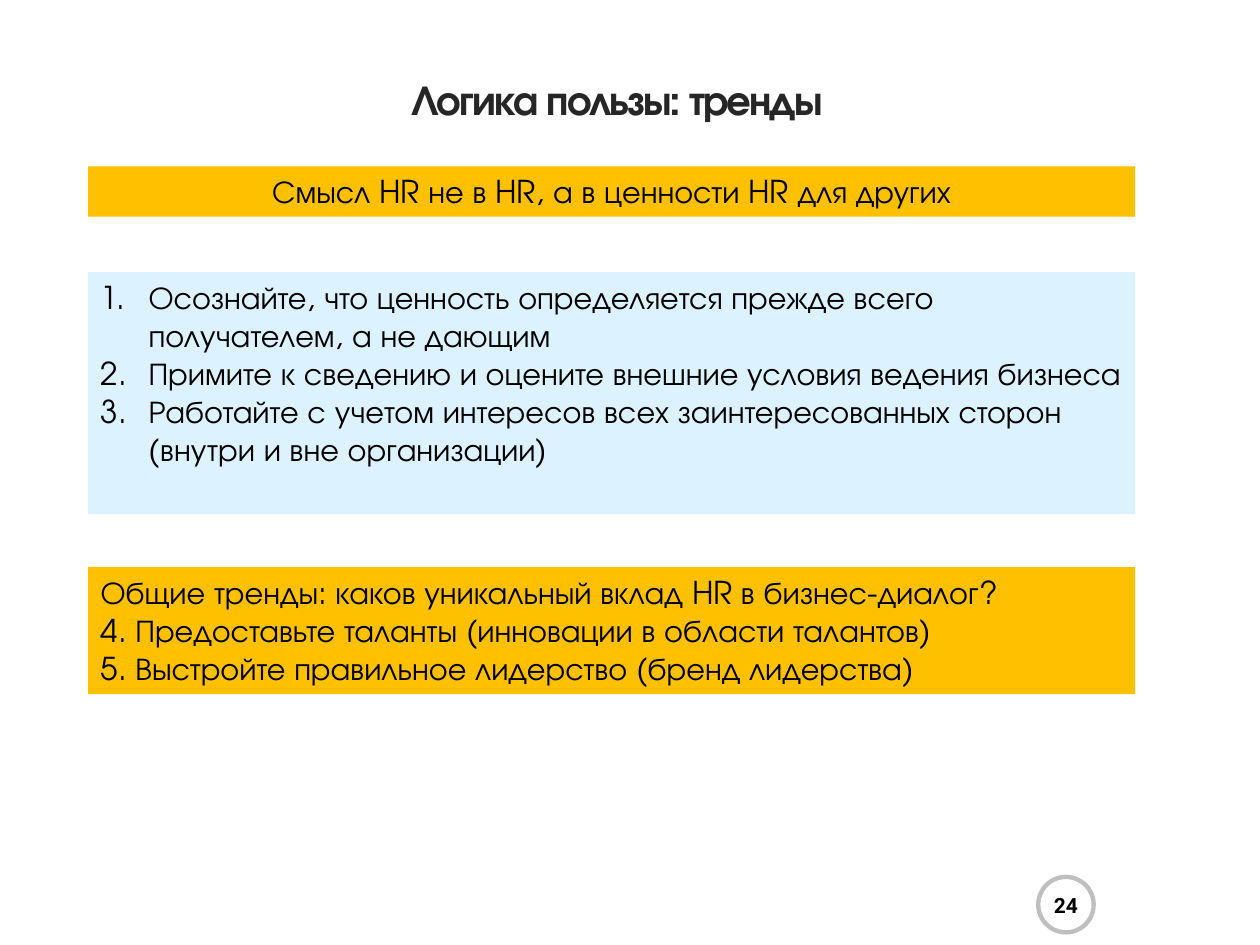
from dataclasses import dataclass

from lxml import etree
from pptx import Presentation
from pptx import util as u
from pptx.dml.color import RGBColor
from pptx.enum import shapes, text
from pptx.oxml.ns import qn


@dataclass(frozen=True)
class Theme:
    font: str = "TeX Gyre Adventor"
    number_font: str = "Roboto"
    title: str = "262626"
    ink: str = "000000"
    amber: str = "FFC000"
    sky: str = "CCECFF"
    white: str = "FFFFFF"
    ring: str = "BFBFBF"
    title_size: int = 24
    body_size: int = 18
    number_size: int = 12


theme = Theme()
LEFT, WIDTH = u.Inches(0.7), u.Inches(8.31)


def paint(sp, color, alpha=None):
    """Fill a shape with a colour, at an opacity in percent if given."""
    sp.fill.solid()
    sp.fill.fore_color.rgb = RGBColor.from_string(color)
    if alpha is not None:
        clr = sp.fill._xPr.find(qn("a:solidFill"))[0]
        etree.SubElement(clr, qn("a:alpha")).set("val", str(alpha * 1000))


def add_run(p, words, size, color=theme.ink, font=theme.font, bold=False):
    r = p.add_run()
    r.text = words
    r.font.name, r.font.size, r.font.bold = font, u.Pt(size), bold
    r.font.color.rgb = RGBColor.from_string(color)
    return r


prs = Presentation()
prs.slide_width, prs.slide_height = u.Inches(10), u.Inches(7.5)
s = prs.slides.add_slide(prs.slide_layouts[1])

# Title
title = s.shapes.title
title.left, title.top = u.Inches(0.62), u.Inches(0.42)
title.width, title.height = u.Inches(8.55), u.Inches(0.78)
tf = title.text_frame
tf.auto_size = text.MSO_AUTO_SIZE.NONE
tf.vertical_anchor = text.MSO_ANCHOR.MIDDLE
p = tf.paragraphs[0]
p.alignment = text.PP_ALIGN.CENTER
p.line_spacing = u.Pt(25.1)
r = add_run(p, "Логика пользы: тренды", theme.title_size, theme.title, bold=True)
r.font._element.set("spc", "-110")

# Numbered list
body = s.placeholders[1]
body.left, body.top = LEFT, u.Inches(2.16)
body.width, body.height = WIDTH, u.Inches(1.92)
paint(body, theme.sky, alpha=67)
tf = body.text_frame
tf.auto_size = text.MSO_AUTO_SIZE.NONE
steps = [
    "Осознайте, что ценность определяется прежде всего получателем, а не дающим",
    "Примите к сведению и оцените внешние условия ведения бизнеса",
    "Работайте с учетом интересов всех заинтересованных сторон (внутри и вне организации)",
]
for i, step in enumerate(steps):
    p = tf.add_paragraph() if i else tf.paragraphs[0]
    p.space_before = u.Pt(0)
    pPr = p._p.get_or_add_pPr()
    pPr.set("marL", str(u.Inches(0.38)))
    pPr.set("indent", str(-u.Inches(0.38)))
    etree.SubElement(pPr, qn("a:buFont")).set("typeface", theme.font)
    etree.SubElement(pPr, qn("a:buAutoNum")).set("type", "arabicPeriod")
    add_run(p, step, theme.body_size)

# Amber bands: top, height, alignment, lines
bands = [
    (1.32, 0.4, text.PP_ALIGN.CENTER, ["Смысл HR не в HR, а в ценности HR для других"]),
    (4.5, 1.01, text.PP_ALIGN.LEFT, [
        "Общие тренды: каков уникальный вклад HR в бизнес-диалог?",
        "4. Предоставьте таланты (инновации в области талантов)",
        "5. Выстройте правильное лидерство (бренд лидерства)",
    ]),
]
for top, height, align, lines in bands:
    band = s.shapes.add_shape(shapes.MSO_SHAPE.RECTANGLE, LEFT, u.Inches(top),
                              WIDTH, u.Inches(height))
    band.shadow.inherit = False
    band.line.fill.background()
    paint(band, theme.amber)
    tf = band.text_frame
    tf.word_wrap = True
    tf.auto_size = text.MSO_AUTO_SIZE.SHAPE_TO_FIT_TEXT
    tf.vertical_anchor = text.MSO_ANCHOR.TOP
    for i, line in enumerate(lines):
        p = tf.add_paragraph() if i else tf.paragraphs[0]
        p.alignment = align
        add_run(p, line, theme.body_size)

# Page number in a ring
ring = s.shapes.add_shape(shapes.MSO_SHAPE.OVAL, u.Inches(8.24), u.Inches(6.96),
                          u.Inches(0.44), u.Inches(0.44))
ring.shadow.inherit = False
paint(ring, theme.white, alpha=25)
ring.line.color.rgb = RGBColor.from_string(theme.ring)
ring.line.width = u.Pt(2.5)

number = s.shapes.add_textbox(u.Inches(8.25), u.Inches(7), u.Inches(0.42), u.Inches(0.36))
tf = number.text_frame
tf.word_wrap = True
tf.vertical_anchor = text.MSO_ANCHOR.MIDDLE
tf.margin_left = tf.margin_right = tf.margin_top = tf.margin_bottom = 0
p = tf.paragraphs[0]
p.alignment = text.PP_ALIGN.CENTER
add_run(p, "24", theme.number_size, font=theme.number_font, bold=True)

prs.save("out.pptx")
